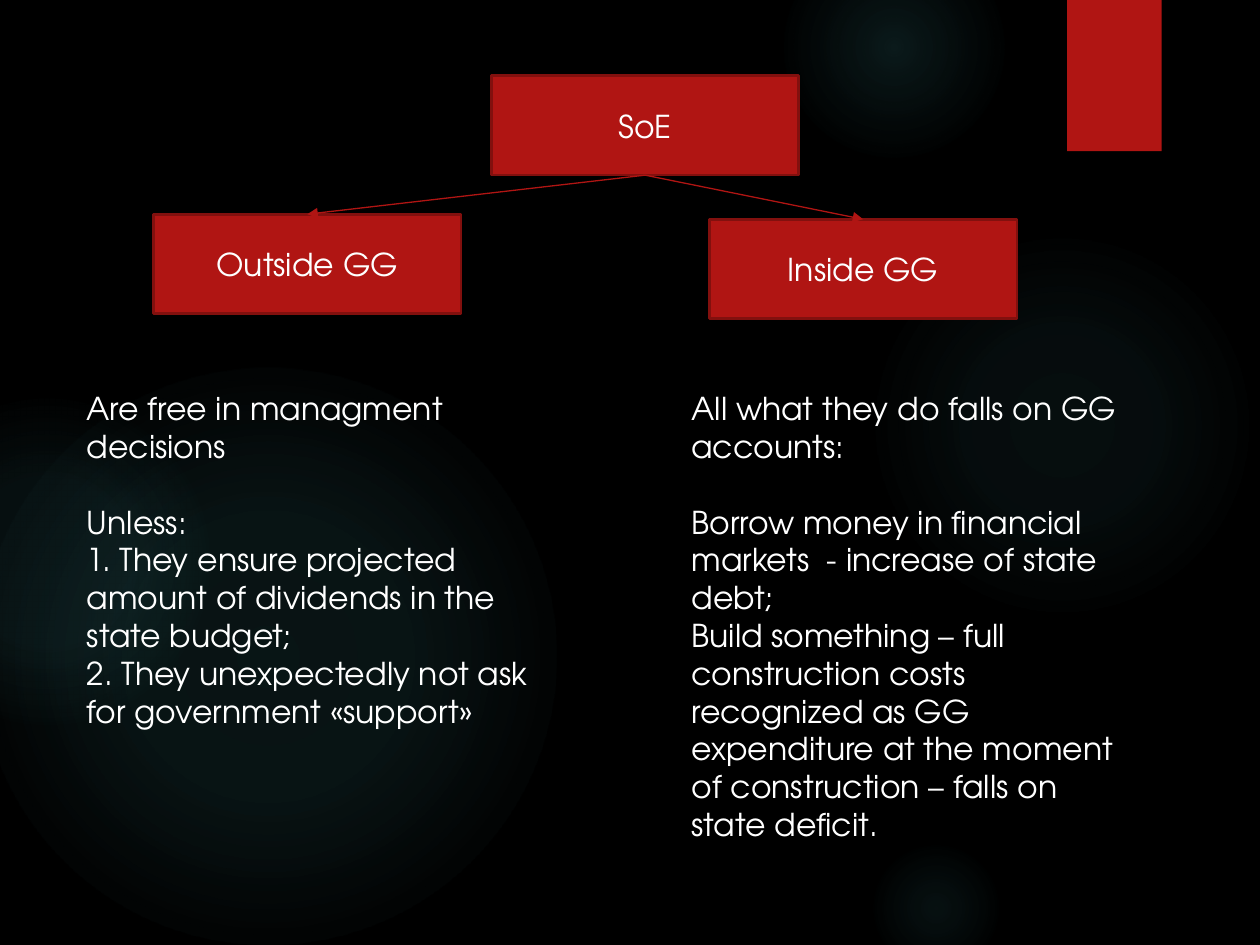
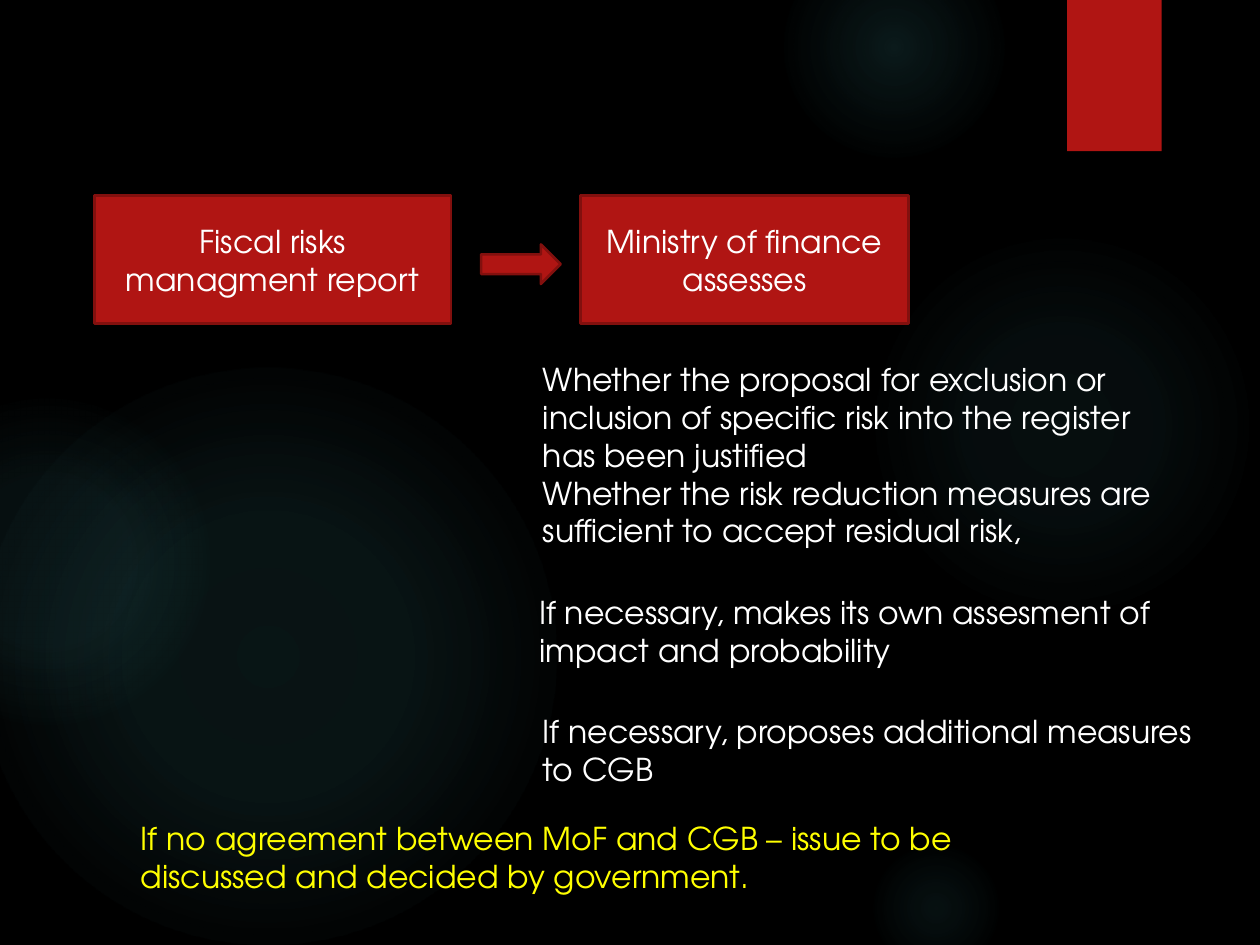
"""Build two slides on state-owned enterprises and the assessment of fiscal risks."""
import pptx
import pptx.util
import pptx.oxml
import pptx.oxml.ns
import pptx.dml.color
import pptx.enum.shapes
import pptx.enum.text
import lxml.etree

Pt = pptx.util.Pt
qn = pptx.oxml.ns.qn
SHAPE = pptx.enum.shapes.MSO_SHAPE
ALIGN = pptx.enum.text.PP_ALIGN
ANCHOR = pptx.enum.text.MSO_ANCHOR
AUTO_SIZE = pptx.enum.text.MSO_AUTO_SIZE

COLORS = {
    "background": "000000",
    "glow": "50B9C1",
    "red": "B01513",
    "edge": "82100E",
    "text": "FFFFFF",
    "warning": "FFFF00",
}
GLOWS = [
    (496, 132, 222, [(0, 7), (36, 6), (69, 0)]),
    (448, -36, 126, [(0, 14), (36, 7), (73, 0)]),
    (496, 480, 78, [(0, 9), (36, 5), (66, 0)]),
    (-12, 210, 330, [(0, 11), (36, 10), (75, 0)]),
    (-66, 228, 186, [(0, 8), (36, 8), (72, 0)]),
]
FONT = {"name": "TeX Gyre Adventor", "size": Pt(18)}
BOX_FRAME = {"word_wrap": True, "vertical_anchor": ANCHOR.MIDDLE}
NOTE_FRAME = {"word_wrap": True, "auto_size": AUTO_SIZE.SHAPE_TO_FIT_TEXT}
BLANK_LINE = Pt(21.6)
TOP, LEFT, BOTTOM, RIGHT = range(4)


def rgb(color):
    return pptx.dml.color.RGBColor.from_string(COLORS[color])


def apply(target, values):
    for attribute, value in values.items():
        setattr(target, attribute, value)


class Deck:
    def __init__(self, width, height):
        self.presentation = pptx.Presentation()
        apply(self.presentation, {"slide_width": Pt(width), "slide_height": Pt(height)})
        self.slide = None

    def new_slide(self):
        self.slide = self.presentation.slides.add_slide(self.presentation.slide_layouts[6])
        backdrop = self.slide.background.fill
        backdrop.solid()
        backdrop.fore_color.rgb = rgb("background")
        for glow in GLOWS:
            self.glow(*glow)
        self.shape(SHAPE.RECTANGLE, (609.8, 0, 54, 86.4), edge=None)

    def shape(self, preset, place, edge="edge"):
        shape = self.slide.shapes.add_shape(preset, *map(Pt, place))
        shape.shadow.inherit = False
        shape.fill.solid()
        shape.fill.fore_color.rgb = rgb("red")
        if edge:
            shape.line.color.rgb = rgb(edge)
            shape.line.width = Pt(1.5)
        else:
            shape.line.fill.background()
        return shape

    def glow(self, left, top, diameter, stops):
        circle = self.shape(SHAPE.OVAL, (left, top, diameter, diameter), edge=None)
        stop_xml = "".join(
            f'<a:gs pos="{position * 1000}"><a:srgbClr val="{COLORS["glow"]}">'
            f'<a:alpha val="{opacity * 1000}"/></a:srgbClr></a:gs>'
            for position, opacity in stops
        )
        gradient = pptx.oxml.parse_xml(
            f'<a:gradFill {pptx.oxml.ns.nsdecls("a")} rotWithShape="1"><a:gsLst>{stop_xml}</a:gsLst>'
            '<a:path path="circle"><a:fillToRect l="50000" t="50000" r="50000" b="50000"/></a:path>'
            "</a:gradFill>"
        )
        properties = circle.element.spPr
        properties.replace(properties.find(qn("a:solidFill")), gradient)

    def fill_text(self, frame, lines, frame_format, align, color="text", gap_before=None):
        apply(frame, frame_format)
        for index, line in enumerate(lines):
            paragraph = frame.paragraphs[0] if index == 0 else frame.add_paragraph()
            paragraph.alignment = align
            if index == gap_before:
                paragraph.space_before = BLANK_LINE
            run = paragraph.add_run()
            run.text = line
            apply(run.font, FONT)
            run.font.color.rgb = rgb(color)

    def box(self, place, *lines):
        box = self.shape(SHAPE.RECTANGLE, place)
        self.fill_text(box.text_frame, lines, BOX_FRAME, ALIGN.CENTER)
        return box

    def note(self, place, *lines, **style):
        note = self.slide.shapes.add_textbox(*map(Pt, place))
        self.fill_text(note.text_frame, lines, NOTE_FRAME, ALIGN.LEFT, **style)

    def arrow(self, parent, child):
        arrow = self.slide.shapes.add_connector(pptx.enum.shapes.MSO_CONNECTOR.STRAIGHT, 0, 0, 0, 0)
        arrow.begin_connect(parent, BOTTOM)
        arrow.end_connect(child, TOP)
        arrow.line.color.rgb = rgb("red")
        arrow.line.width = Pt(0.75)
        properties = arrow.element.spPr
        lxml.etree.SubElement(properties.find(qn("a:ln")), qn("a:tailEnd"), type="triangle")
        lxml.etree.SubElement(properties, qn("a:effectLst"))


def enterprises(deck):
    deck.new_slide()
    size = (175.7, 56.9)
    soe = deck.box((280.8, 43.2, *size), "SoE")
    outside = deck.box((87.8, 122.4, *size), "Outside GG")
    inside = deck.box((405.4, 125.3, *size), "Inside GG")
    deck.note(
        (42.5, 218.9, 266.4, 225.4),
        "Are free in managment decisions",
        "Unless:",
        "1. They ensure projected amount of dividends in the state budget;",
        "2. They unexpectedly not ask for government «support»",
        gap_before=1,
    )
    deck.note(
        (388.1, 218.9, 266.4, 290.9),
        "All what they do falls on GG accounts:",
        "Borrow money in financial markets  - increase of state debt;",
        "Build something – full construction costs recognized as GG expenditure "
        "at the moment of construction – falls on state deficit.",
        gap_before=1,
    )
    for branch in (outside, inside):
        deck.arrow(soe, branch)


def risk_assessment(deck):
    deck.new_slide()
    deck.box((54, 111.6, 203.8, 73.4), "Fiscal risks managment report")
    deck.box((331.9, 111.6, 187.2, 73.4), "Ministry of finance", "assesses")
    deck.shape(SHAPE.RIGHT_ARROW, (275, 139.7, 45.4, 22.6))
    deck.note(
        (303.1, 202.3, 385.2, 116.6),
        "Whether the proposal for exclusion or inclusion of specific risk "
        "into the register has been justified",
        "Whether the risk reduction measures are sufficient to accept residual risk,",
    )
    deck.note(
        (301, 335.5, 391, 51.1),
        "If necessary, makes its own assesment of impact and probability",
    )
    deck.note(
        (303.1, 403.2, 391, 51.1),
        "If necessary, proposes additional measures to CGB",
    )
    deck.note(
        (73.4, 464.4, 493.2, 51.1),
        "If no agreement between MoF and CGB – issue to be discussed and decided by government.",
        color="warning",
    )


def main():
    deck = Deck(720, 540)
    enterprises(deck)
    risk_assessment(deck)
    deck.presentation.save("out.pptx")


if __name__ == "__main__":
    main()
